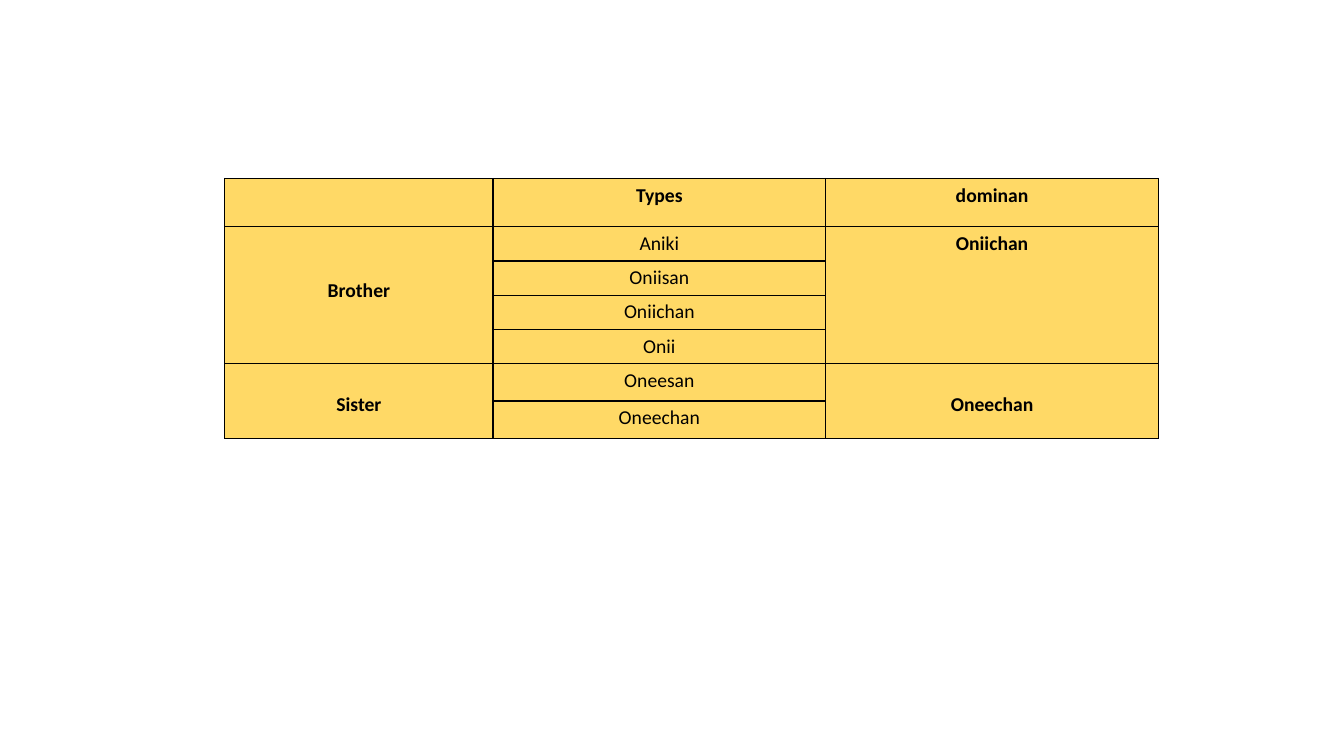
"""Build a slide with a table of brother and sister words."""
from lxml.etree import SubElement
from pptx import Presentation
from pptx.dml.color import RGBColor
from pptx.enum.text import PP_ALIGN
from pptx.oxml.ns import qn
from pptx.util import Inches, Pt

COLORS = {"fill": "FFD966", "ink": "000000"}
WIDTHS = [2.66, 3.3, 3.3]
HEIGHTS = [0.48] + [0.34] * 4 + [0.37] * 2
ROWS = [
    ["", "Types", "dominan"],
    ["Brother", "Aniki", "Oniichan"],
    ["", "Oniisan", ""],
    ["", "Oniichan", ""],
    ["", "Onii", ""],
    ["Sister", "Oneesan", "Oneechan"],
    ["", "Oneechan", ""],
]
SPANS = [(1, 4), (5, 6)]
DROPS = {(1, 0): 0.52, (5, 0): 0.29, (5, 2): 0.29}


def border(cell):
    props = cell._tc.get_or_add_tcPr()
    for side in ("lnL", "lnR", "lnT", "lnB"):
        line = SubElement(props, qn(f"a:{side}"), w=str(Pt(1)))
        fill = SubElement(line, qn("a:solidFill"))
        SubElement(fill, qn("a:srgbClr"), val=COLORS["ink"])


deck = Presentation()
deck.slide_width, deck.slide_height = Inches(13.33), Inches(7.5)
slide = deck.slides.add_slide(deck.slide_layouts[6])
frame = slide.shapes.add_table(
    len(ROWS), len(WIDTHS), Inches(2.23), Inches(1.77),
    Inches(sum(WIDTHS)), Inches(sum(HEIGHTS)))
table = frame.table
table.first_row = False
table.horz_banding = False
for col, width in zip(table.columns, WIDTHS):
    col.width = Inches(width)
for row, height in zip(table.rows, HEIGHTS):
    row.height = Inches(height)

for r, words in enumerate(ROWS):
    for c, word in enumerate(words):
        cell = table.cell(r, c)
        border(cell)
        cell.fill.solid()
        cell.fill.fore_color.rgb = RGBColor.from_string(COLORS["fill"])
        cell.margin_top = Inches(DROPS.get((r, c), 0.05))
        para = cell.text_frame.paragraphs[0]
        para.alignment = PP_ALIGN.CENTER
        font = para.font
        font.name, font.size = "Calibri", Pt(14)
        font.bold = r == 0 or c != 1
        font.color.rgb = RGBColor.from_string(COLORS["ink"])
        if word:
            para.add_run().text = word
        else:
            SubElement(para._p, qn("a:endParaRPr"), sz="1400")

for first, last in SPANS:
    for c in (0, 2):
        table.cell(first, c).merge(table.cell(last, c))

deck.save("out.pptx")
